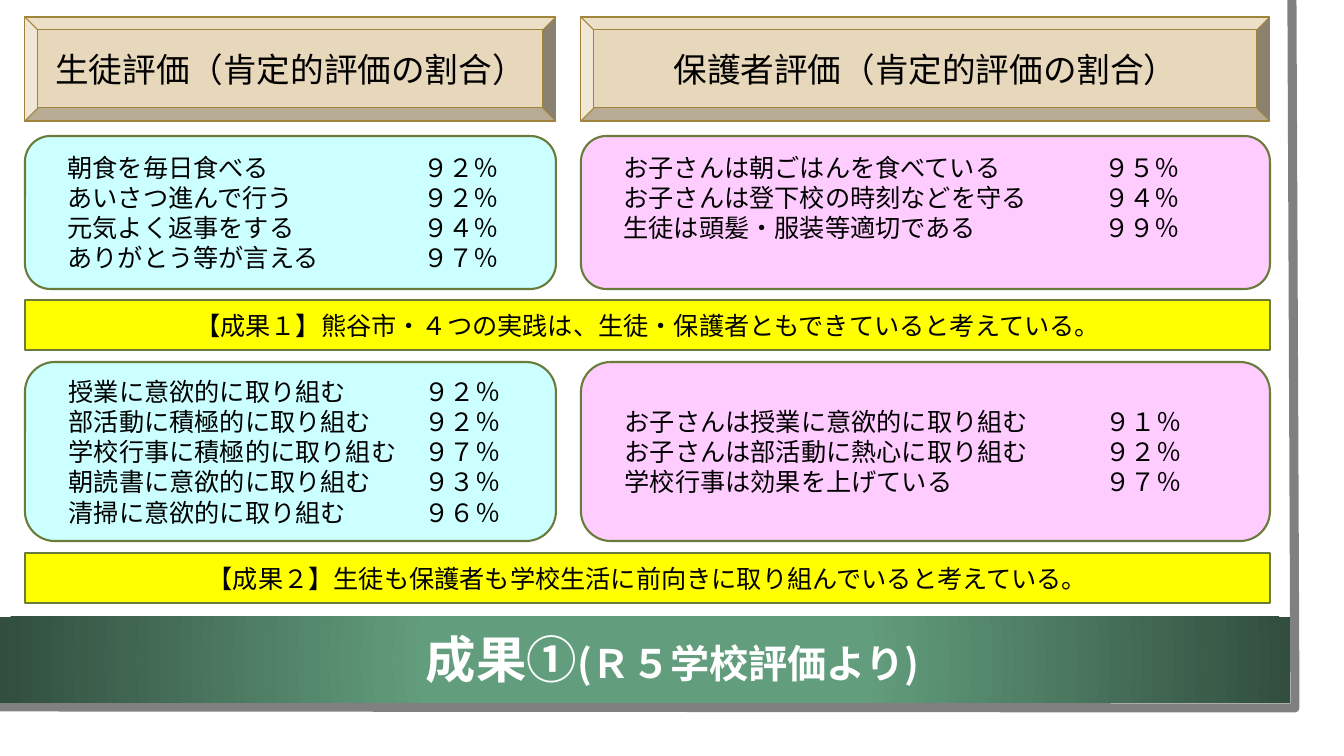
from lxml import etree
from pptx import Presentation, util as u
from pptx.dml.color import RGBColor
from pptx.enum import shapes as s, text as t
from pptx.oxml import parse_xml
from pptx.oxml.ns import nsdecls, qn

PX = 12192000 / 1344
THEME = {
    "font": "Noto Sans CJK JP",
    "ink": "000000", "white": "FFFFFF", "frame": "808080",
    "beige": "E7D7BB", "gold": "A08439", "olive": "6A7C3C",
    "blue": "CCFFFF", "pink": "FFCCFF", "yellow": "FFFF00",
    "green": "629D7D", "dark": "314E3E",
    "title": 36, "sub": 28, "head": 24, "body": 18,
}
KIND = s.MSO_SHAPE
MID = t.MSO_ANCHOR.MIDDLE
CENTER, LEFT = t.PP_ALIGN.CENTER, t.PP_ALIGN.LEFT


def style(run, size, color="ink", bold=False):
    """Format a run, for Latin and East Asian text alike."""
    font = run.font
    font.size, font.bold = u.Pt(THEME[size]), bold
    font.color.rgb = RGBColor.from_string(THEME[color])
    font.name = THEME["font"]
    etree.SubElement(run._r.rPr, qn("a:ea"), typeface=THEME["font"])


def panel(kind, box, fill, line=None, width=1.5, lines=(), size="body", align=CENTER):
    """Add a filled shape with one paragraph for each line of text."""
    shape = slide.shapes.add_shape(kind, *[round(n * PX) for n in box])
    shape.shadow.inherit = False
    shape.fill.solid()
    shape.fill.fore_color.rgb = RGBColor.from_string(THEME[fill])
    if line:
        shape.line.color.rgb = RGBColor.from_string(THEME[line])
        shape.line.width = u.Pt(width)
    else:
        shape.line.fill.background()
    frame = shape.text_frame
    frame.word_wrap, frame.vertical_anchor = True, MID
    if lines:
        frame.text = "\n".join(lines)
        for para in frame.paragraphs:
            para.alignment = align
            for run in para.runs:
                style(run, size)
    return shape


deck = Presentation()
deck.slide_width, deck.slide_height = round(1344 * PX), round(756 * PX)
slide = deck.slides.add_slide(deck.slide_layouts[5])

# Page frame and title band
panel(KIND.RECTANGLE, (0, 0, 1320, 733), "white")
path = slide.shapes.build_freeform(1292, 0, scale=PX)
path.add_line_segments([(1295, 708), (0, 707)], close=False)
edge = path.convert_to_shape()
edge.shadow.inherit = False
edge.fill.background()
edge.line.color.rgb = RGBColor.from_string(THEME["frame"])
edge.line.width = u.Pt(6.5)

band = panel(KIND.RECTANGLE, (0, 617, 1290, 86), "green")
props = band._element.spPr
props.replace(props.find(qn("a:solidFill")), parse_xml(
    f'<a:gradFill {nsdecls("a")} rotWithShape="1"><a:gsLst>'
    f'<a:gs pos="34000"><a:srgbClr val="{THEME["green"]}"/></a:gs>'
    f'<a:gs pos="100000"><a:srgbClr val="{THEME["dark"]}"/></a:gs></a:gsLst>'
    '<a:path path="circle"><a:fillToRect l="50000" t="50000" r="50000" b="50000"/>'
    '</a:path></a:gradFill>'))

title = slide.shapes.title
title.left, title.top, title.width, title.height = [
    round(n * PX) for n in (378, 622, 589, 72)]
frame = title.text_frame
frame.auto_size, frame.vertical_anchor = t.MSO_AUTO_SIZE.NONE, MID
para = frame.paragraphs[0]
para.alignment = CENTER
for words, size in (("成果①", "title"), ("(Ｒ５学校評価より)", "sub")):
    run = para.add_run()
    run.text = words
    style(run, size, "white", True)
slide.shapes._spTree.append(title._element)

# Columns: left, width, colour, tab stop, heading, then (rows, free lines below)
columns = [
    (25, 531, "blue", 356, "生徒評価（肯定的評価の割合）", [
        ([("朝食を毎日食べる", "９２％"),
          ("あいさつ進んで行う", "９２％"),
          ("元気よく返事をする", "９４％"),
          ("ありがとう等が言える", "９７％")], 0),
        ([("授業に意欲的に取り組む", "９２％"),
          ("部活動に積極的に取り組む", "９２％"),
          ("学校行事に積極的に取り組む", "９７％"),
          ("朝読書に意欲的に取り組む", "９３％"),
          ("清掃に意欲的に取り組む", "９６％")], 0)]),
    (581, 689, "pink", 481, "保護者評価（肯定的評価の割合）", [
        ([("お子さんは朝ごはんを食べている", "９５％"),
          ("お子さんは登下校の時刻などを守る", "９４％"),
          ("生徒は頭髪・服装等適切である", "９９％")], 1),
        ([("お子さんは授業に意欲的に取り組む", "９１％"),
          ("お子さんは部活動に熱心に取り組む", "９２％"),
          ("学校行事は効果を上げている", "９７％")], 0)]),
]
for left, width, color, stop, head, groups in columns:
    panel(KIND.BEVEL, (left, 17, width, 104), "beige", "gold", 0.75, [head], "head")
    for (rows, free), (top, height) in zip(groups, ((136, 153), (362, 179))):
        card = panel(KIND.ROUNDED_RECTANGLE, (left, top, width, height), color,
                     "olive", lines=["\t".join(row) for row in rows], align=LEFT)
        card.text_frame.margin_left = round(35 * PX)
        card.text_frame.margin_bottom = round((5 + 30 * free) * PX)
        for para in card.text_frame.paragraphs:
            tabs = etree.SubElement(para._p.get_or_add_pPr(), qn("a:tabLst"))
            etree.SubElement(tabs, qn("a:tab"), pos=str(round(stop * PX)), algn="l")

# Findings
for top, words in (
        (300, "【成果１】熊谷市・４つの実践は、生徒・保護者ともできていると考えている。"),
        (553, "【成果２】生徒も保護者も学校生活に前向きに取り組んでいると考えている。")):
    panel(KIND.RECTANGLE, (25, top, 1245, 50), "yellow", "olive", lines=[words])

deck.save("out.pptx")
